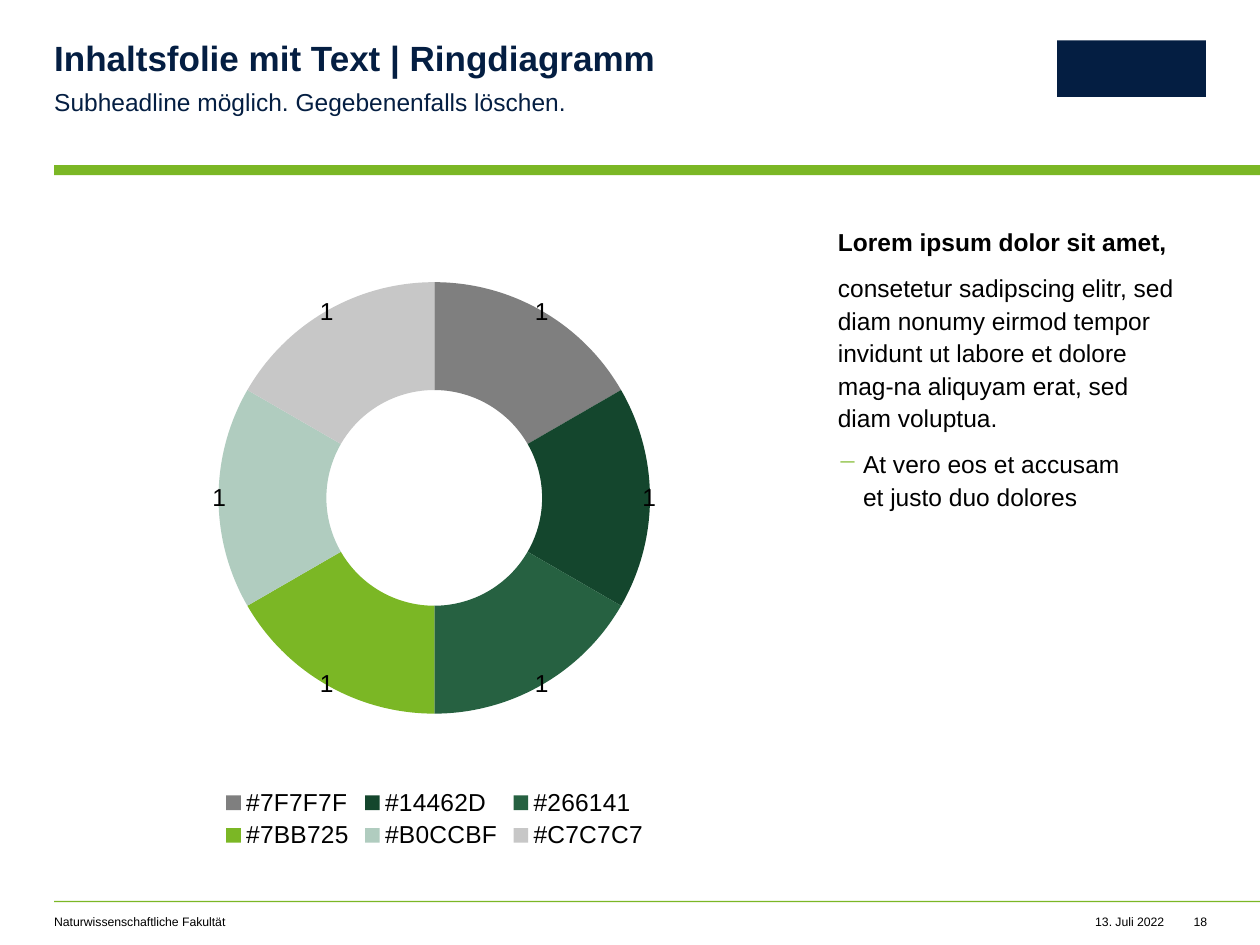
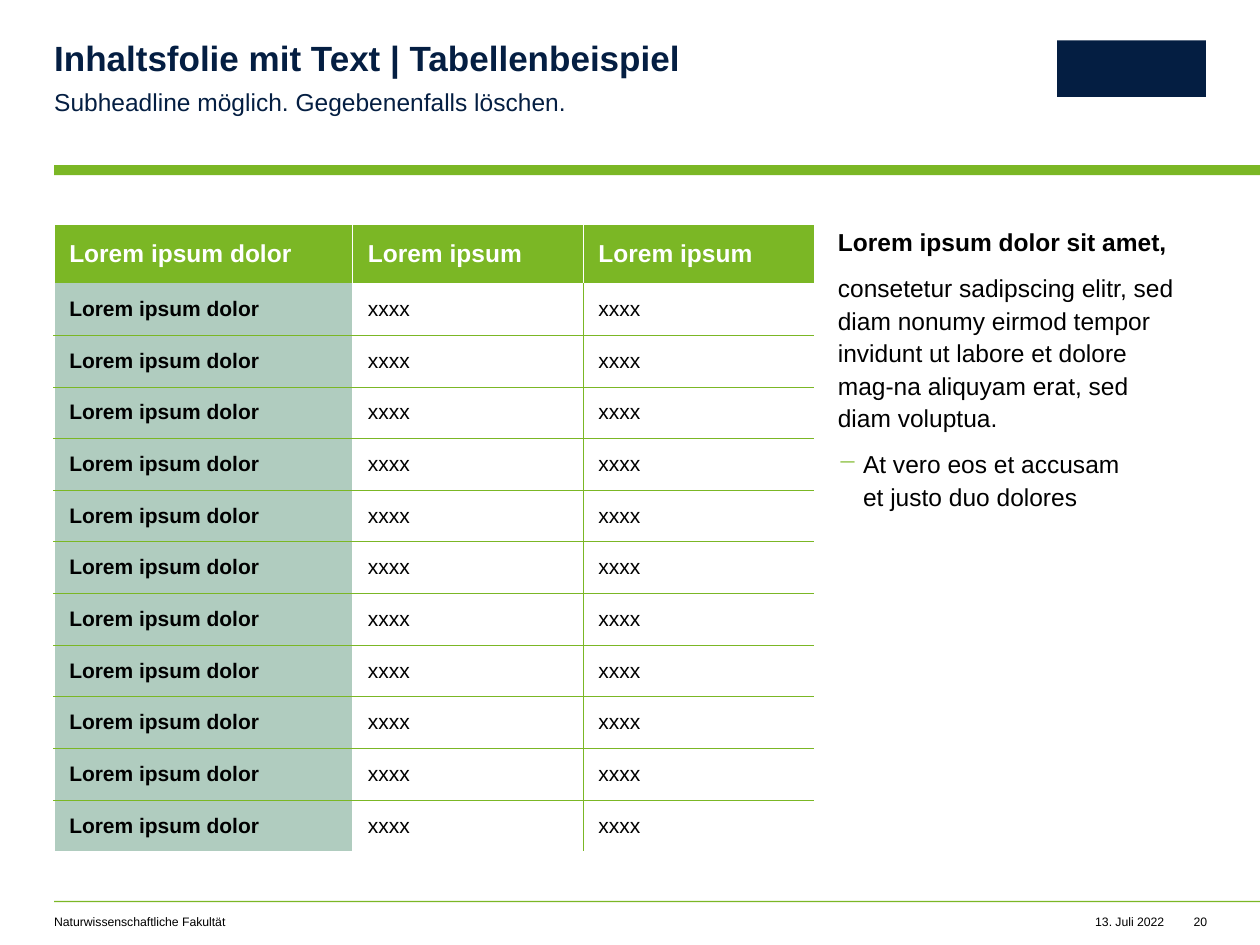
import math

from pptx import Presentation
from pptx import util as u
from pptx.chart.data import CategoryChartData
from pptx.dml.color import RGBColor
from pptx.enum import chart as charts, shapes, text
from pptx.oxml import parse_xml
from pptx.oxml.ns import nsdecls, qn

GREEN = RGBColor(0x7B, 0xB7, 0x25)
NAVY = RGBColor(0x04, 0x1E, 0x42)
MINT = RGBColor(0xB0, 0xCC, 0xBF)
BLACK = RGBColor(0, 0, 0)
WHITE = RGBColor(0xFF, 0xFF, 0xFF)
RING_COLOURS = [
    RGBColor(0x7F, 0x7F, 0x7F), RGBColor(0x14, 0x46, 0x2D), RGBColor(0x26, 0x61, 0x41),
    GREEN, MINT, RGBColor(0xC7, 0xC7, 0xC7),
]
FONT = "Arial"
NO_TABLE_STYLE = "{2D5ABB26-0587-4C30-8999-92F81FD0307C}"

SUBHEADLINE = "Subheadline möglich. Gegebenenfalls löschen."
FACULTY = "Naturwissenschaftliche Fakultät"
DATE = "13. Juli 2022"
BODY_HEAD = "Lorem ipsum dolor sit amet,"
BODY_TEXT = ("consetetur sadipscing elitr, sed diam nonumy eirmod tempor "
             "invidunt ut labore et dolore mag-na aliquyam erat, sed diam voluptua.")
BODY_BULLET = "At vero eos et accusam\vet justo duo dolores"

RING_VALUES = [1] * len(RING_COLOURS)
TABLE_HEAD = ["Lorem ipsum dolor", "Lorem ipsum", "Lorem ipsum"]
TABLE_ROWS = [["Lorem ipsum dolor", "xxxx", "xxxx"]] * 11
COLUMN_WIDTHS = [2.37, 1.83, 1.83]
HEAD_HEIGHT, ROW_HEIGHT = 0.47, 0.41

LEFT, TOP = 0.43, 1.78
CONTENT_WIDTH, CONTENT_HEIGHT = 6.04, 5
PLOT_AREA = {"x": 0.118, "y": 0.092, "w": 0.763, "h": 0.685}
LABEL_SHIFT = 0.42


def inches(*lengths):
    return [u.Inches(length) for length in lengths]


def style_font(font, size, colour=BLACK, bold=False):
    font.name, font.size, font.bold = FONT, u.Pt(size), bold
    font.color.rgb = colour


def add_block(page, place, colour):
    block = page.shapes.add_shape(shapes.MSO_SHAPE.RECTANGLE, *inches(*place))
    block.shadow.inherit = False
    block.fill.solid()
    block.fill.fore_color.rgb = colour
    block.line.fill.background()


def add_text(page, place, lines, size, colour=BLACK, bold=False, right=0,
             spacing=1.0, after=0, align=text.PP_ALIGN.LEFT):
    box = page.shapes.add_textbox(*inches(*place))
    frame = box.text_frame
    frame.word_wrap = True
    frame.margin_left = frame.margin_top = frame.margin_bottom = 0
    frame.margin_right = u.Inches(right)
    for index, line in enumerate(lines):
        para = frame.paragraphs[0] if index == 0 else frame.add_paragraph()
        para.text = line
        para.alignment = align
        para.line_spacing = spacing
        para.space_after = u.Pt(after)
        style_font(para.font, size, colour, bold)
    return frame.paragraphs


def add_bullet(para):
    props = para._p.get_or_add_pPr()
    props.set("marL", str(u.Inches(0.2)))
    props.set("indent", str(u.Inches(-0.2)))
    marks = [f'<a:buClr {nsdecls("a")}><a:srgbClr val="{GREEN}"/></a:buClr>',
             f'<a:buChar {nsdecls("a")} char="−"/>']
    place = list(props).index(props.find(qn("a:defRPr")))
    for offset, mark in enumerate(marks):
        props.insert(place + offset, parse_xml(mark))


def add_page(deck, title, number):
    page = deck.slides.add_slide(deck.slide_layouts[6])
    add_block(page, (LEFT, 1.31, 9.58, 0.08), GREEN)
    add_block(page, (LEFT, 7.15, 9.58, 0.01), GREEN)
    add_block(page, (8.39, 0.32, 1.18, 0.45), NAVY)
    right = text.PP_ALIGN.RIGHT
    add_text(page, (8.53, 7.26, 0.71, 0.12), [DATE], 7, align=right)
    add_text(page, (LEFT, 7.26, 4.49, 0.12), [FACULTY], 7)
    add_text(page, (9.38, 7.26, 0.2, 0.12), [str(number)], 7, align=right)
    body = add_text(page, (6.65, TOP, 2.93, CONTENT_HEIGHT),
                    [BODY_HEAD, BODY_TEXT, BODY_BULLET], 14,
                    right=0.2, spacing=1.1, after=8)
    body[0].font.bold = True
    add_bullet(body[2])
    add_text(page, (LEFT, 0.33, 5.61, 0.3), [title], 20, NAVY, True, spacing=0.9)
    add_text(page, (LEFT, 0.67, 5.61, 0.24), [SUBHEADLINE], 14, NAVY, spacing=1.1)
    return page


def manual_layout(values, inner=False):
    target = '<c:layoutTarget val="inner"/>' if inner else ""
    modes = '<c:xMode val="edge"/><c:yMode val="edge"/>' if inner else ""
    sizes = "".join(f'<c:{key} val="{value:.3f}"/>' for key, value in values.items())
    return parse_xml(f'<c:layout {nsdecls("c")}><c:manualLayout>{target}{modes}{sizes}'
                     "</c:manualLayout></c:layout>")


def add_ring(page):
    data = CategoryChartData(number_format="General")
    data.categories = [f"#{colour}" for colour in RING_COLOURS]
    data.add_series("Series 1", RING_VALUES)
    chart = page.shapes.add_chart(
        charts.XL_CHART_TYPE.DOUGHNUT,
        *inches(LEFT, TOP, CONTENT_WIDTH, CONTENT_HEIGHT), data).chart
    style_font(chart.font, 10)
    chart.has_title = False
    chart.has_legend = True
    chart.legend.position = charts.XL_LEGEND_POSITION.BOTTOM
    chart.legend.include_in_layout = False
    style_font(chart.legend.font, 14)

    area = chart._chartSpace.find(".//" + qn("c:plotArea"))
    old_layout = area.find(qn("c:layout"))
    if old_layout is not None:
        area.remove(old_layout)
    area.insert(0, manual_layout(PLOT_AREA, inner=True))
    area.find(".//" + qn("c:holeSize")).set("val", "80")

    series = chart.plots[0].series[0]
    series.data_labels.show_value = True
    style_font(series.data_labels.font, 14)
    for index, colour in enumerate(RING_COLOURS):
        point = series.points[index]
        point.format.fill.solid()
        point.format.fill.fore_color.rgb = colour
        style_font(point.data_label.font, 14)
    for index, label in enumerate(series._element.iter(qn("c:dLbl"))):
        angle = math.tau * (index + 0.5) / len(RING_COLOURS)
        shift = {"x": LABEL_SHIFT * math.sin(angle) / CONTENT_WIDTH,
                 "y": -LABEL_SHIFT * math.cos(angle) / CONTENT_HEIGHT}
        label.insert(1, manual_layout(shift))


def set_borders(cell, borders):
    props = cell._tc.get_or_add_tcPr()
    for side in "LRTB":
        if side in borders:
            colour, width = borders[side]
            props.append(parse_xml(
                f'<a:ln{side} {nsdecls("a")} w="{u.Pt(width)}"><a:solidFill>'
                f'<a:srgbClr val="{colour}"/></a:solidFill></a:ln{side}>'))


def cell_borders(row, column):
    last_row, last_column = len(TABLE_ROWS), len(TABLE_HEAD) - 1
    if row == 0:
        borders = {"T": (WHITE, 1), "L": (WHITE, 0.5), "R": (WHITE, 0.5)}
    else:
        hairline = (GREEN, 0.25)
        borders = {"L": (WHITE, 1) if column < 2 else hairline,
                   "R": (WHITE, 1) if column == 0 else hairline}
        if row > 1:
            borders["T"] = hairline
        if row < last_row:
            borders["B"] = hairline
    if column == last_column:
        del borders["R"]
    return borders


def add_grid(page):
    rows = [TABLE_HEAD] + TABLE_ROWS
    heights = [HEAD_HEIGHT] + [ROW_HEIGHT] * len(TABLE_ROWS)
    table = page.shapes.add_table(
        len(rows), len(TABLE_HEAD),
        *inches(LEFT, TOP, sum(COLUMN_WIDTHS), sum(heights))).table
    table.first_row = table.horz_banding = False
    table._tbl.tblPr.find(qn("a:tableStyleId")).text = NO_TABLE_STYLE
    for column, width in enumerate(COLUMN_WIDTHS):
        table.columns[column].width = u.Inches(width)
    for row, words in enumerate(rows):
        table.rows[row].height = u.Inches(heights[row])
        for column, word in enumerate(words):
            cell = table.cell(row, column)
            set_borders(cell, cell_borders(row, column))
            if row == 0 or column == 0:
                cell.fill.solid()
                cell.fill.fore_color.rgb = GREEN if row == 0 else MINT
            else:
                cell.fill.background()
            cell.vertical_anchor = text.MSO_ANCHOR.MIDDLE
            cell.margin_left = cell.margin_right = u.Inches(0.12)
            cell.margin_top = cell.margin_bottom = u.Inches(0.04)
            para = cell.text_frame.paragraphs[0]
            para.text = word
            style_font(para.font, 14 if row == 0 else 12,
                       WHITE if row == 0 else BLACK, row == 0 or column == 0)


def main():
    deck = Presentation()
    deck.slide_width, deck.slide_height = inches(10, 7.5)
    add_ring(add_page(deck, "Inhaltsfolie mit Text | Ringdiagramm", 18))
    add_grid(add_page(deck, "Inhaltsfolie mit Text | Tabellenbeispiel", 20))
    deck.save("out.pptx")


if __name__ == "__main__":
    main()
